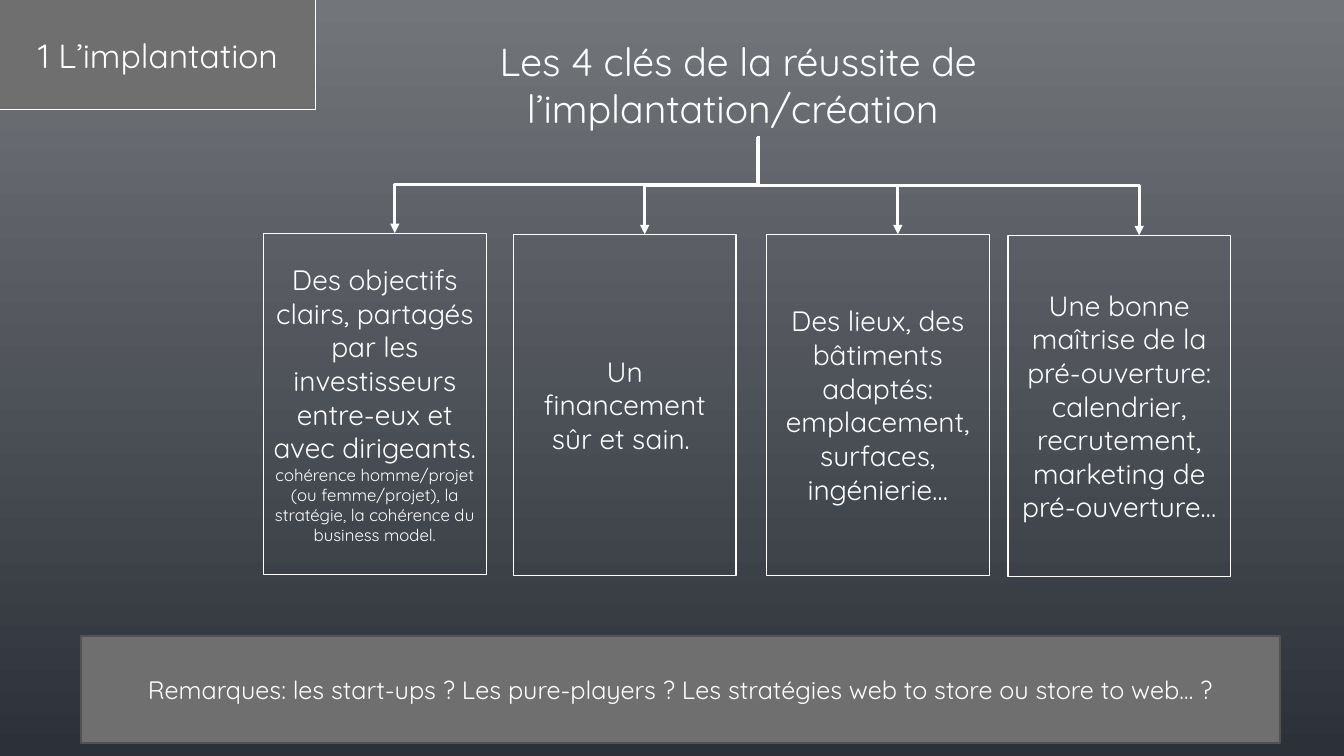
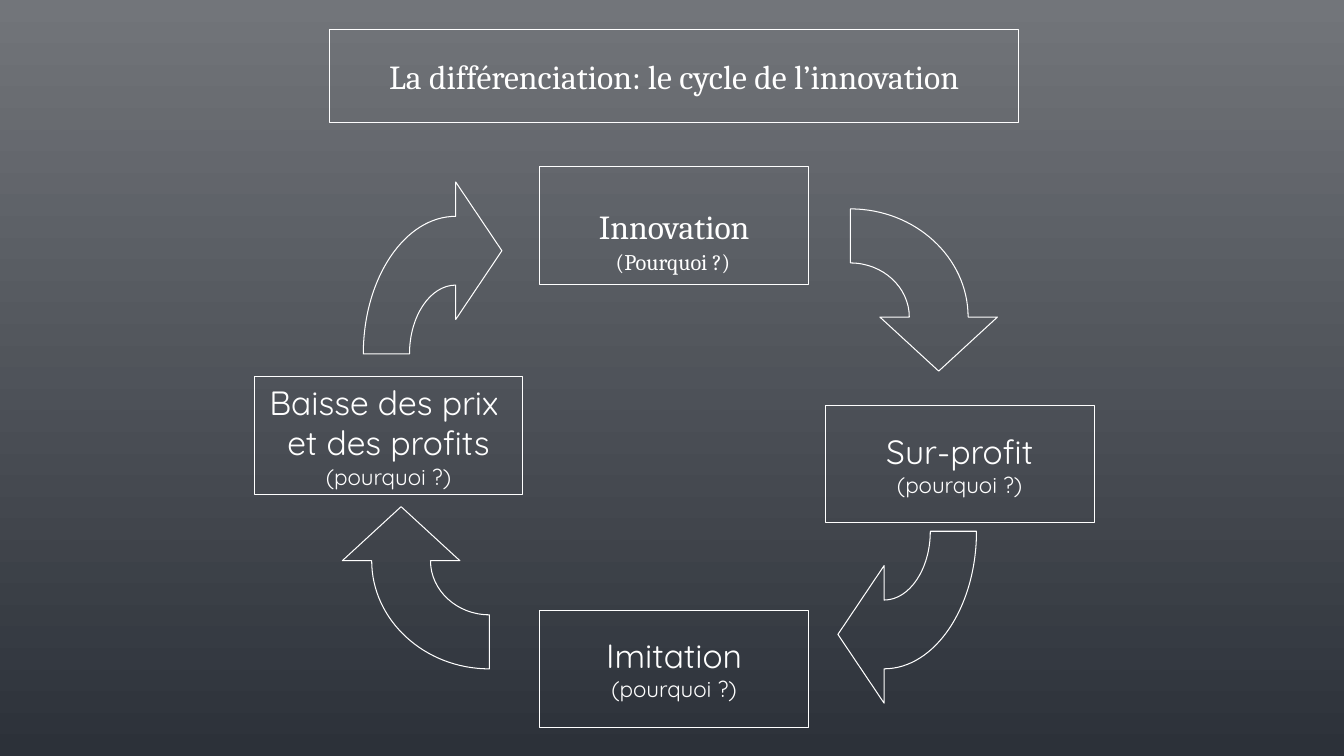
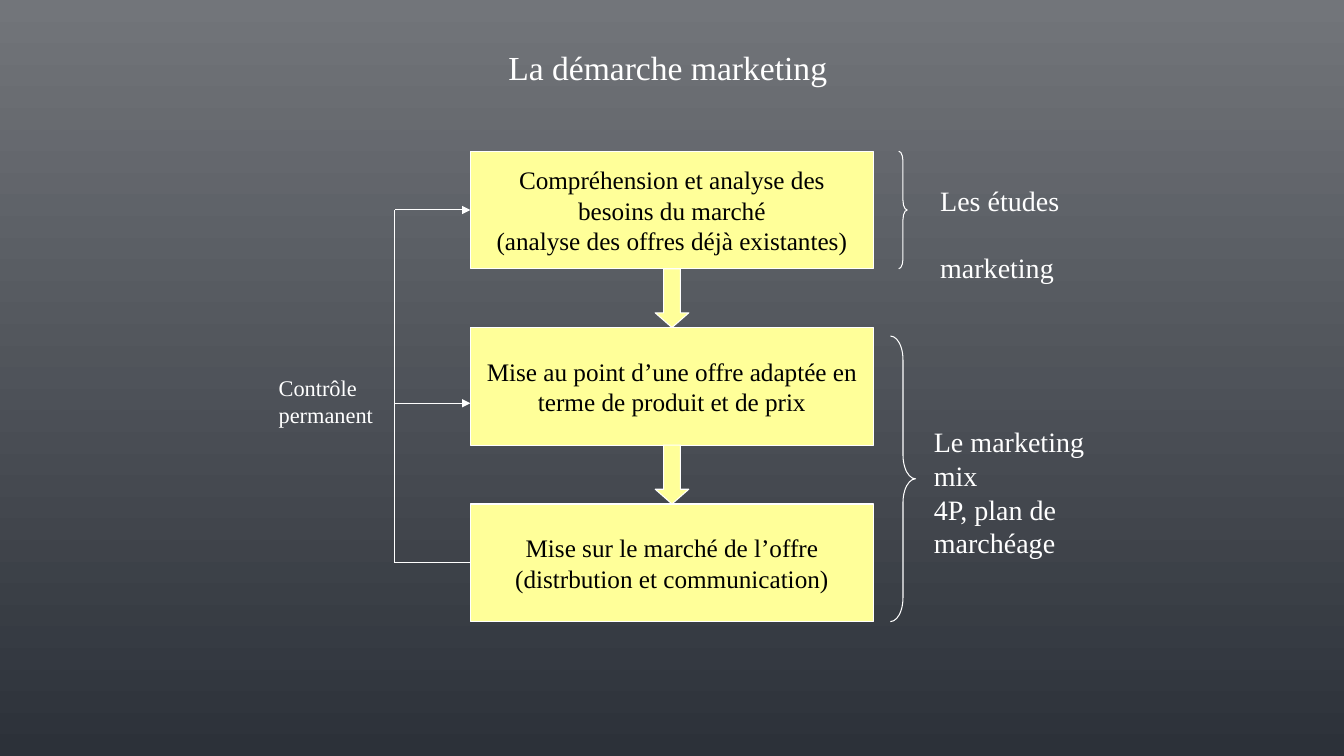
from pptx import Presentation
from pptx.dml.color import RGBColor
from pptx.enum.shapes import MSO_CONNECTOR, MSO_SHAPE
from pptx.enum.text import MSO_ANCHOR, MSO_AUTO_SIZE, PP_ALIGN
from pptx.oxml.ns import qn
from pptx.util import Pt
from lxml import etree

PX = 9525  # EMU per px, slide is 1280 x 720 px
COLORS = {
    "top": "72757A", "bottom": "2C3139", "white": "FFFFFF", "black": "000000",
    "grey": "6F6F6F", "grey_line": "525252", "yellow": "FFFF99",
}
SANS, SERIF, ROMAN = "Quicksand", "Cambria", "Times New Roman"


def emu(*lengths):
    return [round(v * PX) for v in lengths]


def rgb(name):
    return RGBColor.from_string(COLORS[name])


# ---- shared parts ----

def set_background(master):
    fill = master.background.fill
    fill.gradient()
    fill.gradient_angle = 270
    for stop, name in zip(fill.gradient_stops, ("top", "bottom")):
        stop.color.rgb = rgb(name)


def paint(sp, fill=None, line="white", width=0.75):
    if fill:
        sp.fill.solid()
        sp.fill.fore_color.rgb = rgb(fill)
    else:
        sp.fill.background()
    sp.line.color.rgb = rgb(line)
    sp.line.width = Pt(width)
    sp.shadow.inherit = False


def write(sp, lines, size, font, color="white", align=PP_ALIGN.CENTER,
          anchor=MSO_ANCHOR.MIDDLE, wrap=True, gap=0):
    """Each line is a text, or a (text, size) pair."""
    tf = sp.text_frame
    tf.auto_size = MSO_AUTO_SIZE.NONE
    tf.word_wrap = wrap
    tf.vertical_anchor = anchor
    for i, line in enumerate(lines):
        text, pt = line if isinstance(line, tuple) else (line, size)
        p = tf.paragraphs[0] if i == 0 else tf.add_paragraph()
        p.text = text
        p.alignment = align
        if i and gap:
            p.space_before = Pt(gap)
        for r in p.runs:
            r.font.size = Pt(pt)
            r.font.name = font
            r.font.color.rgb = rgb(color)


def add_title(s, box, text, size, font, anchor=MSO_ANCHOR.TOP):
    sp = s.shapes.title
    sp.left, sp.top, sp.width, sp.height = emu(*box)
    write(sp, [text], size, font, anchor=anchor)
    return sp


def add_shape(s, kind, box, adjust=(), **style):
    sp = s.shapes.add_shape(kind, *emu(*box))
    for i, value in enumerate(adjust):
        sp.adjustments[i] = value
    paint(sp, **style)
    return sp


def add_box(s, box, lines, size, font, color="white", wrap=True, **style):
    sp = add_shape(s, MSO_SHAPE.RECTANGLE, box, **style)
    write(sp, lines, size, font, color, wrap=wrap)
    return sp


def add_label(s, box, lines, size, font, wrap=False, gap=0):
    sp = s.shapes.add_textbox(*emu(*box))
    write(sp, lines, size, font, align=PP_ALIGN.LEFT, anchor=MSO_ANCHOR.TOP,
          wrap=wrap, gap=gap)


def add_line(s, start, end, width=0.75, arrow=False, kind=MSO_CONNECTOR.STRAIGHT):
    line = s.shapes.add_connector(kind, *emu(*start, *end))
    line.line.color.rgb = rgb("white")
    line.line.width = Pt(width)
    sp_pr = line._element.spPr
    if arrow:
        ln = sp_pr.find(qn("a:ln"))
        etree.SubElement(ln, qn("a:tailEnd"), type="triangle")
    etree.SubElement(sp_pr, qn("a:effectLst"))
    return line


# ---- slide 1: four keys ----

def add_drop(s, start, end):
    """Elbow that leaves downwards: a turned box centred between both ends."""
    (x0, y0), (x1, y1) = start, end
    cx, cy = (x0 + x1) / 2, (y0 + y1) / 2
    dx, dy = abs(x1 - x0) / 2, (y1 - y0) / 2
    side = 1 if x1 < x0 else -1
    line = add_line(s, (cx - side * dy, cy - dx), (cx + side * dy, cy + dx),
                    2.25, True, MSO_CONNECTOR.ELBOW)
    line.rotation = 90 if side == 1 else 270


def key_columns(s, width, height, root, drop_offset, columns):
    for left, top, lines in columns:
        add_box(s, (left, top, width, height), lines, 20, SANS)
    for left, top, _ in columns:
        add_drop(s, root, (left + drop_offset, top))


def keys_slide(s):
    add_box(s, (0, 0, 301, 104), ["1 L’implantation"], 24, SANS, wrap=False, fill="grey")
    add_title(s, (407, 31, 592, 99),
              "Les 4 clés de la réussite de l’implantation/création ", 28, SANS)
    key_columns(s, 212, 325, (722, 130), 125, [
        (251, 222, ["Des objectifs clairs, partagés par les investisseurs entre-eux "
                    "et avec dirigeants.",
                    ("cohérence homme/projet (ou femme/projet), la stratégie, "
                     "la cohérence du business model.", 12)]),
        (489, 223, ["Un financement sûr et sain. "]),
        (730, 223, ["Des lieux, des bâtiments adaptés: emplacement, surfaces, "
                    "ingénierie…"]),
        (960, 224, ["Une bonne maîtrise de la pré-ouverture: calendrier, recrutement, "
                    "marketing de pré-ouverture…"]),
    ])
    add_box(s, (77, 606, 1142, 102),
            ["Remarques: les start-ups ? Les pure-players ? "
             "Les stratégies web to store ou store to web… ?"],
            18, SANS, fill="grey", line="grey_line", width=1.5)


# ---- slide 2: innovation cycle ----

def bend(segment, *points):
    """Turn a straight segment of an outline into a cubic curve."""
    curve = etree.Element(qn("a:cubicBezTo"))
    for x, y in points:
        etree.SubElement(curve, qn("a:pt"), x=str(x), y=str(y))
    segment.getparent().replace(segment, curve)


def add_cycle_arrow(s, center, radii, turns):
    """Quarter ring with an arrowhead, in the box of its whole ellipse."""
    rx, ry = radii
    k = 0.55  # handle length of a quarter ellipse

    def at(u, v):
        return emu(u * rx, (v + 1) * ry)

    outline = [(0, -0.5), (0, -1), (1, 0), (1.25, 0), (0.75, 0.5), (0.25, 0)]
    builder = s.shapes.build_freeform(*at(0.5, 0))
    builder.add_line_segments([at(*point) for point in outline], close=True)
    sp = builder.convert_to_shape()
    paint(sp)
    # Curve both edges of the ring
    outline_path = next(sp._element.iter(qn("a:path")))
    edges = outline_path.findall(qn("a:lnTo"))
    bend(edges[0], at(0.5, -k / 2), at(k / 2, -0.5), at(0, -0.5))
    bend(edges[2], at(k, -1), at(1, -k), at(1, 0))
    # Refer the outline to the whole ellipse, then turn it
    width, height = emu(2 * rx, 2 * ry)
    outline_path.set("w", str(width))
    outline_path.set("h", str(height))
    for pt in outline_path.iter(qn("a:pt")):
        pt.set("x", str(int(pt.get("x")) + width // 2))
    sp.left, sp.top = emu(center[0] - rx, center[1] - ry)
    sp.width, sp.height = width, height
    sp.rotation = 90 * turns


def cycle_slide(s):
    paint(add_title(s, (314, 28, 656, 89), "La différenciation: le cycle de l’innovation",
                    24, SERIF, MSO_ANCHOR.MIDDLE))
    # Stages
    why = ("(pourquoi ?)", 16)
    for left, top, lines, font in (
            (514, 159, ["Innovation"], SERIF),
            (786, 386, ["Sur-profit", why], SANS),
            (514, 581, ["Imitation", why], SANS),
            (242, 359, ["Baisse des prix ", "et des profits", why], SANS)):
        add_box(s, (left, top, 256, 112), lines, 24, font, wrap=False)
    add_label(s, (577, 232, 138, 36), ["(Pourquoi ?)"], 16, SERIF)
    # Arrows between stages
    centers = [(810, 302), (842, 506), (466, 534), (434, 337)]
    for turns, center in enumerate(centers):
        add_cycle_arrow(s, center, (131, 88) if turns % 2 else (112, 103), turns)


# ---- slide 3: marketing steps ----

def step_column(s, left, top, width, height, gap, steps):
    boxes = []
    for i, lines in enumerate(steps):
        y = top + i * (height + gap)
        boxes.append(add_box(s, (left, y, width, height), lines, 18, ROMAN, "black",
                             fill="yellow"))
        if i:
            add_shape(s, MSO_SHAPE.DOWN_ARROW, (left + width / 2 - 16, y - gap, 32, gap),
                      (0.5, 0.438), fill="yellow")
    return boxes


def control_loop(s, left, right, levels, boxes):
    top, middle, bottom = levels
    add_line(s, (right, bottom), (left, bottom)).begin_connect(boxes[2], 1)
    add_line(s, (left, bottom), (left, top))
    add_line(s, (left, middle), (right, middle), arrow=True)
    add_line(s, (left, top), (right, top), arrow=True).end_connect(boxes[0], 1)
    add_label(s, (left - 120, middle - 32, 109, 61), ["Contrôle", "permanent"], 16, ROMAN)


def steps_slide(s):
    add_title(s, (312, 40, 648, 48), "La démarche marketing", 24, ROMAN)
    boxes = step_column(s, 448, 144, 384, 112, 56, [
        ["Compréhension et analyse des besoins du marché",
         "(analyse des offres déjà existantes)"],
        ["Mise au point d’une offre adaptée en terme de produit et de prix"],
        ["Mise sur le marché de l’offre", "(distrbution et communication)"],
    ])
    control_loop(s, 376, 448, (200, 384, 536), boxes)
    # Braces and what they stand for
    add_shape(s, MSO_SHAPE.RIGHT_BRACE, (856, 144, 8, 112), (1.167, 0.5))
    add_label(s, (886, 170, 133, 74), ["Les études", "marketing"], 20, ROMAN, gap=24)
    add_shape(s, MSO_SHAPE.RIGHT_BRACE, (848, 320, 24, 272), (0.944, 0.5))
    add_label(s, (880, 400, 208, 106), ["Le marketing mix", "4P, plan de", "marchéage"],
              20, ROMAN, wrap=True)


def main():
    prs = Presentation()
    prs.slide_width, prs.slide_height = emu(1280, 720)
    set_background(prs.slide_master)
    for build in (keys_slide, cycle_slide, steps_slide):
        build(prs.slides.add_slide(prs.slide_layouts[5]))
    prs.save("out.pptx")


if __name__ == "__main__":
    main()
